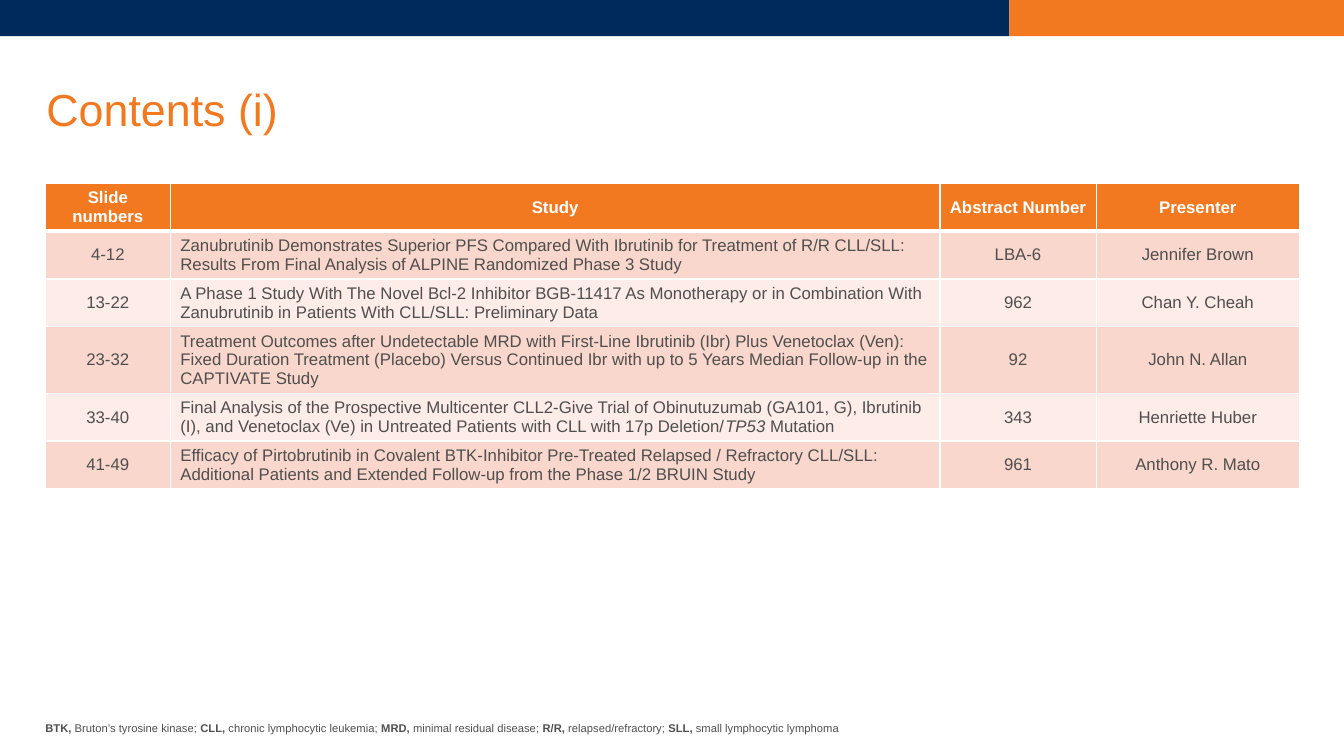
from dataclasses import dataclass

from lxml import etree
from pptx import Presentation
from pptx.dml.color import RGBColor
from pptx.enum.shapes import MSO_SHAPE
from pptx.enum.text import MSO_ANCHOR, MSO_AUTO_SIZE, PP_ALIGN
from pptx.oxml.ns import qn
from pptx.util import Inches, Pt

RECTANGLE = MSO_SHAPE.RECTANGLE
MIDDLE, BOTTOM = MSO_ANCHOR.MIDDLE, MSO_ANCHOR.BOTTOM
NO_AUTOFIT = MSO_AUTO_SIZE.NONE
LEFT, CENTER = PP_ALIGN.LEFT, PP_ALIGN.CENTER

SLIDE_WIDTH, SLIDE_HEIGHT = 13.33, 7.5


@dataclass(frozen=True)
class Theme:
    """Colours, typeface and type sizes of the deck."""
    navy: str = "002A5C"
    orange: str = "F37920"
    ink: str = "4E4F4E"
    white: str = "FFFFFF"
    bands: tuple = ("FAD7CD", "FDECE8")
    typeface: str = "Arial"
    title_size: int = 32
    table_size: int = 12
    note_size: int = 8


THEME = Theme()

COLUMN_WIDTHS = (1.24, 7.64, 1.55, 2.02)
ROW_HEIGHT, TALL_ROW_HEIGHT = 0.47, 0.66
TALL_ROW = 3
STUDY_COLUMN, ABSTRACT_COLUMN = 1, 2
HEADINGS = ("Slide numbers", "Study", "Abstract Number", "Presenter")
STUDIES = (
    ("4-12",
     "Zanubrutinib Demonstrates Superior PFS Compared With Ibrutinib for Treatment of "
     "R/R CLL/SLL: Results From Final Analysis of ALPINE Randomized Phase 3 Study",
     "LBA-6", "Jennifer Brown"),
    ("13-22",
     "A Phase 1 Study With The Novel Bcl-2 Inhibitor BGB-11417 As Monotherapy or in "
     "Combination With Zanubrutinib in Patients With CLL/SLL: Preliminary Data",
     "962", "Chan Y. Cheah"),
    ("23-32",
     "Treatment Outcomes after Undetectable MRD with First-Line Ibrutinib (Ibr) Plus "
     "Venetoclax (Ven): Fixed Duration Treatment (Placebo) Versus Continued Ibr with up "
     "to 5 Years Median Follow-up in the CAPTIVATE Study",
     "92", "John N. Allan"),
    ("33-40",
     "Final Analysis of the Prospective Multicenter CLL2-Give Trial of Obinutuzumab "
     "(GA101, G), Ibrutinib (I), and Venetoclax (Ve) in Untreated Patients with CLL with "
     "17p Deletion/*TP53* Mutation",
     "343", "Henriette Huber"),
    ("41-49",
     "Efficacy of Pirtobrutinib in Covalent BTK-Inhibitor Pre-Treated Relapsed / "
     "Refractory CLL/SLL: Additional Patients and Extended Follow-up from the Phase 1/2 "
     "BRUIN Study",
     "961", "Anthony R. Mato"),
)
ABBREVIATIONS = (
    "*BTK, *Bruton’s tyrosine kinase; *CLL, *chronic lymphocytic leukemia; "
    "*MRD, *minimal residual disease; *R/R, *relapsed/refractory; "
    "*SLL, *small lymphocytic lymphoma"
)


def write_text(frame, text, *, size, color, bold=False, align=LEFT,
               spacing=1.0, emphasis="italic"):
    """Write text into a frame, giving the parts between asterisks the emphasis."""
    paragraph = frame.paragraphs[0]
    paragraph.alignment = align
    paragraph.line_spacing = spacing
    for index, part in enumerate(text.split("*")):
        if not part:
            continue
        run = paragraph.add_run()
        run.text = part
        run.font.name = THEME.typeface
        run.font.size = Pt(size)
        run.font.bold = bold
        run.font.color.rgb = RGBColor.from_string(color)
        if index % 2:
            setattr(run.font, emphasis, True)


def prepare_frame(frame, anchor):
    """Give a text frame wrapping, an anchor and no insets."""
    frame.word_wrap = True
    frame.auto_size = NO_AUTOFIT
    frame.vertical_anchor = anchor
    frame.margin_left = frame.margin_right = 0
    frame.margin_top = frame.margin_bottom = 0


def add_banner(slide, left, top, width, height):
    """Draw the two-colour band, three quarters navy and one quarter orange."""
    navy_width = width * 0.751
    parts = ((left, navy_width, THEME.navy),
             (left + navy_width, width - navy_width, THEME.orange))
    for part_left, part_width, color in parts:
        band = slide.shapes.add_shape(RECTANGLE, Inches(part_left), Inches(top),
                                      Inches(part_width), Inches(height))
        band.shadow.inherit = False
        band.fill.solid()
        band.fill.fore_color.rgb = RGBColor.from_string(color)
        band.line.fill.background()


def add_title(slide, text, left, top, width, height):
    """Place the title placeholder in its box."""
    title = slide.shapes.title
    title.left, title.top = Inches(left), Inches(top)
    title.width, title.height = Inches(width), Inches(height)
    prepare_frame(title.text_frame, MIDDLE)
    write_text(title.text_frame, text, size=THEME.title_size, color=THEME.orange,
               spacing=0.9)


def set_borders(cell, bottom_width):
    """Draw white cell borders, with the bottom one at its own width."""
    properties = cell._tc.get_or_add_tcPr()
    widths = (("a:lnL", 1), ("a:lnR", 1), ("a:lnT", 1), ("a:lnB", bottom_width))
    for position, (tag, width) in enumerate(widths):
        line = etree.Element(qn(tag), w=str(Pt(width)))
        fill = etree.SubElement(line, qn("a:solidFill"))
        etree.SubElement(fill, qn("a:srgbClr"), val=THEME.white)
        properties.insert(position, line)


def format_cell(cell, text, row, column):
    """Fill one cell of the contents table."""
    heading = row == 0
    cell.vertical_anchor = MIDDLE
    if heading and column == ABSTRACT_COLUMN:
        cell.margin_left = cell.margin_right = Inches(0.04)
    cell.fill.solid()
    fill = THEME.orange if heading else THEME.bands[(row - 1) % 2]
    cell.fill.fore_color.rgb = RGBColor.from_string(fill)
    set_borders(cell, 3 if heading else 1)
    write_text(cell.text_frame, text, size=THEME.table_size, bold=heading,
               color=THEME.white if heading else THEME.ink,
               align=LEFT if column == STUDY_COLUMN and not heading else CENTER)


def add_contents_table(slide, left, top, width):
    """Build the table of studies, sharing the width out by column."""
    rows = (HEADINGS, *STUDIES)
    heights = [TALL_ROW_HEIGHT if row == TALL_ROW else ROW_HEIGHT
               for row in range(len(rows))]
    table = slide.shapes.add_table(len(rows), len(HEADINGS), Inches(left), Inches(top),
                                   Inches(width), Inches(sum(heights))).table
    for column, share in zip(table.columns, COLUMN_WIDTHS):
        column.width = Inches(width * share / sum(COLUMN_WIDTHS))
    for row, texts in enumerate(rows):
        table.rows[row].height = Inches(heights[row])
        for column, text in enumerate(texts):
            format_cell(table.cell(row, column), text, row, column)


def add_abbreviations(slide, left, top, width, height):
    """Place the abbreviations note at the foot of its box."""
    note = slide.shapes.add_textbox(Inches(left), Inches(top),
                                    Inches(width), Inches(height))
    prepare_frame(note.text_frame, BOTTOM)
    write_text(note.text_frame, ABBREVIATIONS, size=THEME.note_size,
               color=THEME.ink, emphasis="bold")


def main():
    """Build the contents slide and save it."""
    deck = Presentation()
    deck.slide_width, deck.slide_height = Inches(SLIDE_WIDTH), Inches(SLIDE_HEIGHT)
    slide = deck.slides.add_slide(deck.slide_layouts.get_by_name("Title Only"))
    add_banner(slide, 0, 0, SLIDE_WIDTH, 0.36)
    add_title(slide, "Contents (i)", 0.46, 0.63, 12.43, 0.97)
    add_abbreviations(slide, 0.45, 6.87, 9.33, 0.42)
    add_contents_table(slide, 0.45, 1.82, 12.44)
    deck.save("out.pptx")


if __name__ == "__main__":
    main()
